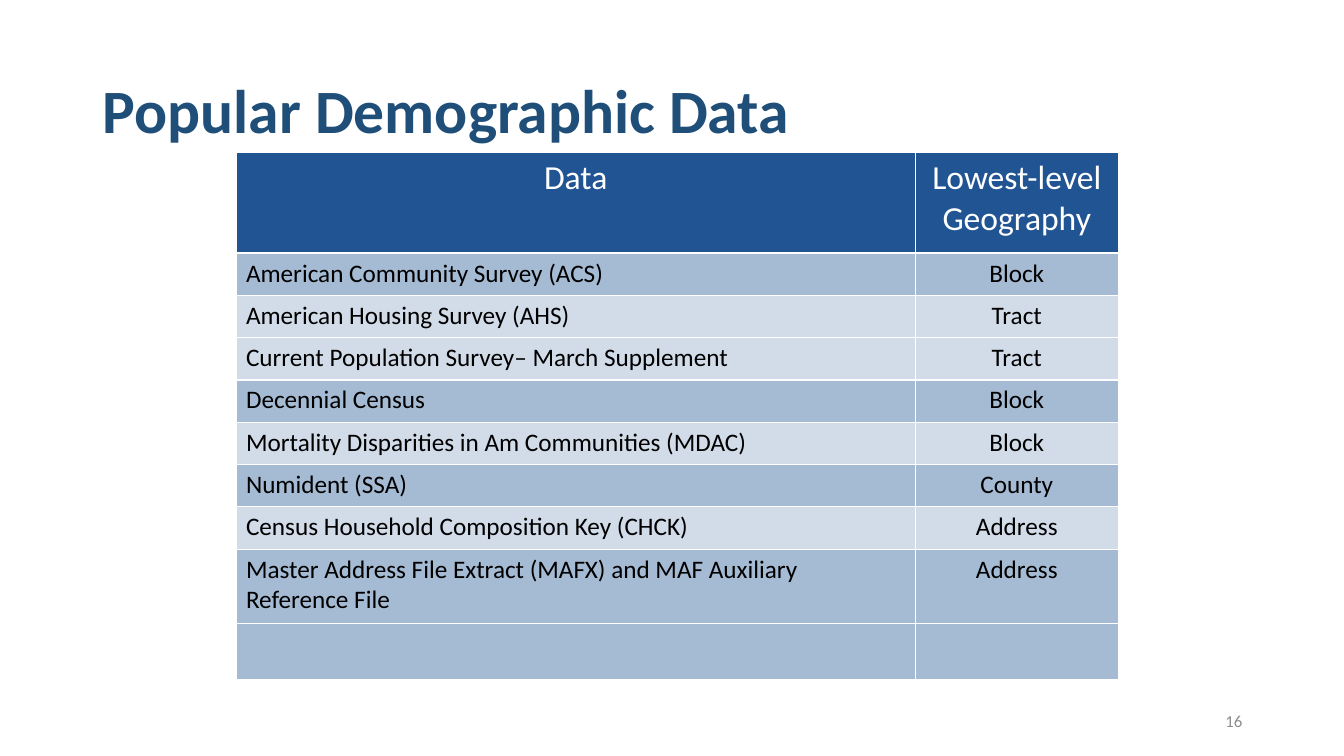
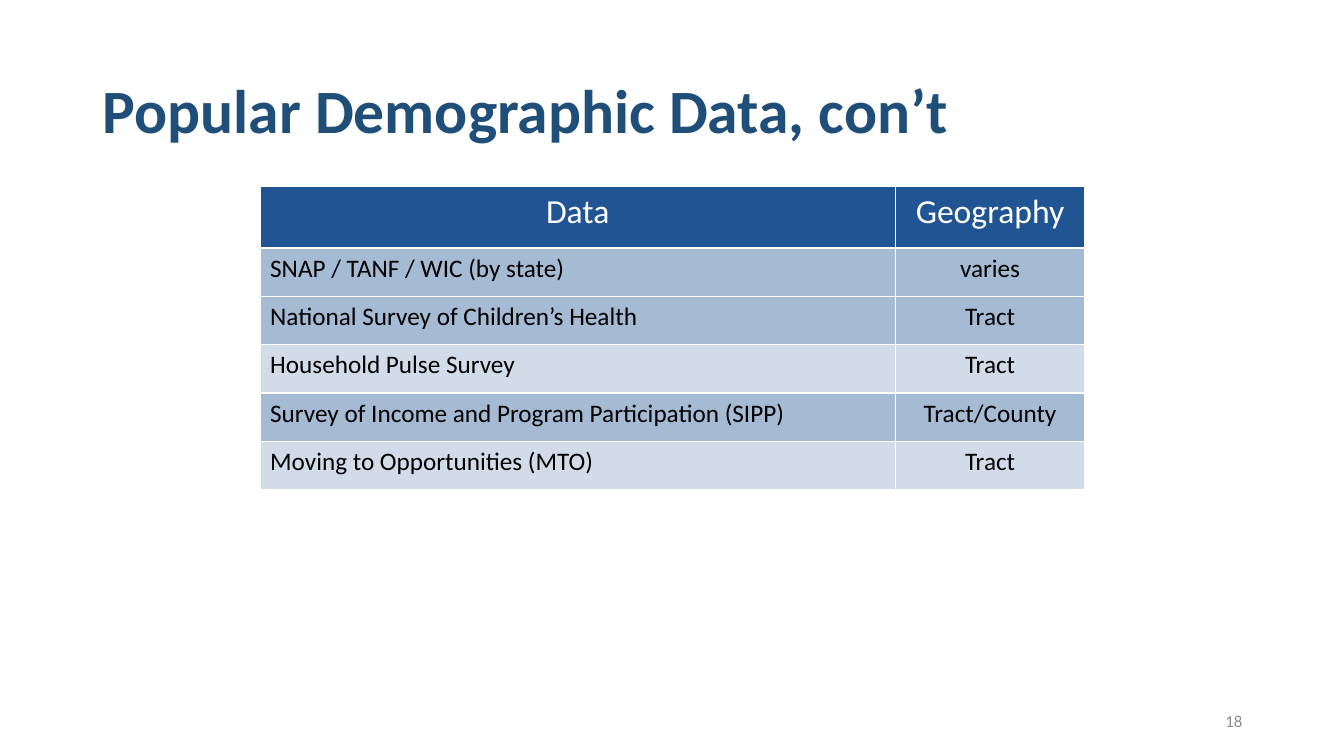
from dataclasses import dataclass

from lxml.etree import SubElement
from pptx import Presentation
from pptx.dml.color import RGBColor
from pptx.enum.text import MSO_ANCHOR, MSO_AUTO_SIZE, PP_ALIGN
from pptx.oxml import parse_xml
from pptx.oxml.ns import nsdecls, qn
from pptx.util import Inches, Pt


@dataclass(frozen=True)
class Theme:
    font: str = "Calibri"
    title: str = "1F4E79"
    fill: str = "205493"
    light: str = "FFFFFF"
    dark: str = "000000"
    gray: str = "8C8C8C"
    big: int = 44
    head: int = 24
    body: int = 18
    small: int = 12
    rule: int = 1
    deep: int = 40
    pale: int = 20


THEME = Theme()


def write(frame, text, size, color, bold=False, align=PP_ALIGN.LEFT, space=None):
    para = frame.paragraphs[0]
    para.alignment = align
    para.line_spacing = space
    if text:
        run = para.add_run()
        run.text = text
        font = run.font
        font.name = THEME.font
        font.size = Pt(size)
        font.bold = bold
        font.color.rgb = RGBColor.from_string(color)


def paint(cell, alpha):
    cell.fill.solid()
    cell.fill.fore_color.rgb = RGBColor.from_string(THEME.fill)
    props = cell._tc.get_or_add_tcPr()
    if alpha < 100:
        tint = props.find(".//" + qn("a:srgbClr"))
        SubElement(tint, qn("a:alpha"), val=str(alpha * 1000))
    for spot, side in enumerate("LRTB"):
        props.insert(spot, parse_xml(
            f'<a:ln{side} {nsdecls("a")} w="{Pt(THEME.rule)}"><a:solidFill>'
            f'<a:srgbClr val="{THEME.light}"/></a:solidFill></a:ln{side}>'))


class Deck:
    def __init__(self):
        self.show = Presentation()
        self.show.slide_width = Inches(13.33)
        self.show.slide_height = Inches(7.5)
        self.slide = None

    def page(self, title, number):
        self.slide = self.show.slides.add_slide(self.show.slide_layouts[5])
        self.title(title)
        self.number(number)

    def title(self, text):
        shape = self.slide.shapes.title
        shape.left, shape.top = Inches(0.92), Inches(0.4)
        shape.width, shape.height = Inches(11.5), Inches(1.45)
        frame = shape.text_frame
        frame.auto_size = MSO_AUTO_SIZE.NONE
        frame.vertical_anchor = MSO_ANCHOR.MIDDLE
        write(frame, text, THEME.big, THEME.title, bold=True, space=0.9)

    def number(self, value):
        box = self.slide.shapes.add_textbox(
            Inches(9.42), Inches(6.95), Inches(3), Inches(0.4))
        frame = box.text_frame
        frame.word_wrap = True
        frame.vertical_anchor = MSO_ANCHOR.MIDDLE
        write(frame, str(value), THEME.small, THEME.gray, align=PP_ALIGN.RIGHT)

    def table(self, left, top, widths, heights, head, rows):
        grid = self.slide.shapes.add_table(
            len(heights), len(widths), Inches(left), Inches(top),
            Inches(sum(widths)), Inches(sum(heights))).table
        for col, width in zip(grid.columns, widths):
            col.width = Inches(width)
        for row, height in zip(grid.rows, heights):
            row.height = Inches(height)
        for col, text in enumerate(head):
            cell = grid.cell(0, col)
            write(cell.text_frame, text, THEME.head, THEME.light,
                  align=PP_ALIGN.CENTER)
            paint(cell, 100)
        for row, (name, level, alpha) in enumerate(rows, 1):
            pairs = ((name, PP_ALIGN.LEFT), (level, PP_ALIGN.CENTER))
            for col, (text, align) in enumerate(pairs):
                cell = grid.cell(row, col)
                write(cell.text_frame, text, THEME.body, THEME.dark, align=align)
                paint(cell, alpha)


def main():
    deck = Deck()
    deep, pale = THEME.deep, THEME.pale

    deck.page("Popular Demographic Data", 16)
    deck.table(2.34, 1.51, (6.74, 2.01), [1] + [0.42] * 7 + [0.74, 0.55],
               ("Data", "Lowest-level Geography"), [
        ("American Community Survey (ACS)", "Block", deep),
        ("American Housing Survey (AHS)", "Tract", pale),
        ("Current Population Survey– March Supplement", "Tract", pale),
        ("Decennial Census", "Block", deep),
        ("Mortality Disparities in Am Communities (MDAC)", "Block", pale),
        ("Numident (SSA)", "County", deep),
        ("Census Household Composition Key (CHCK)", "Address", pale),
        ("Master Address File Extract (MAFX) and MAF Auxiliary Reference File",
         "Address", deep),
        ("", "", deep),
    ])

    deck.page("Popular Demographic Data, con’t", 18)
    deck.table(2.58, 1.85, (6.3, 1.88), [0.61] + [0.48] * 5,
               ("Data", "Geography"), [
        ("SNAP / TANF / WIC (by state)", "varies", deep),
        ("National Survey of Children’s Health", "Tract", deep),
        ("Household Pulse Survey", "Tract", pale),
        ("Survey of Income and Program Participation (SIPP)", "Tract/County", deep),
        ("Moving to Opportunities (MTO)", "Tract", pale),
    ])

    deck.show.save("out.pptx")


if __name__ == "__main__":
    main()
